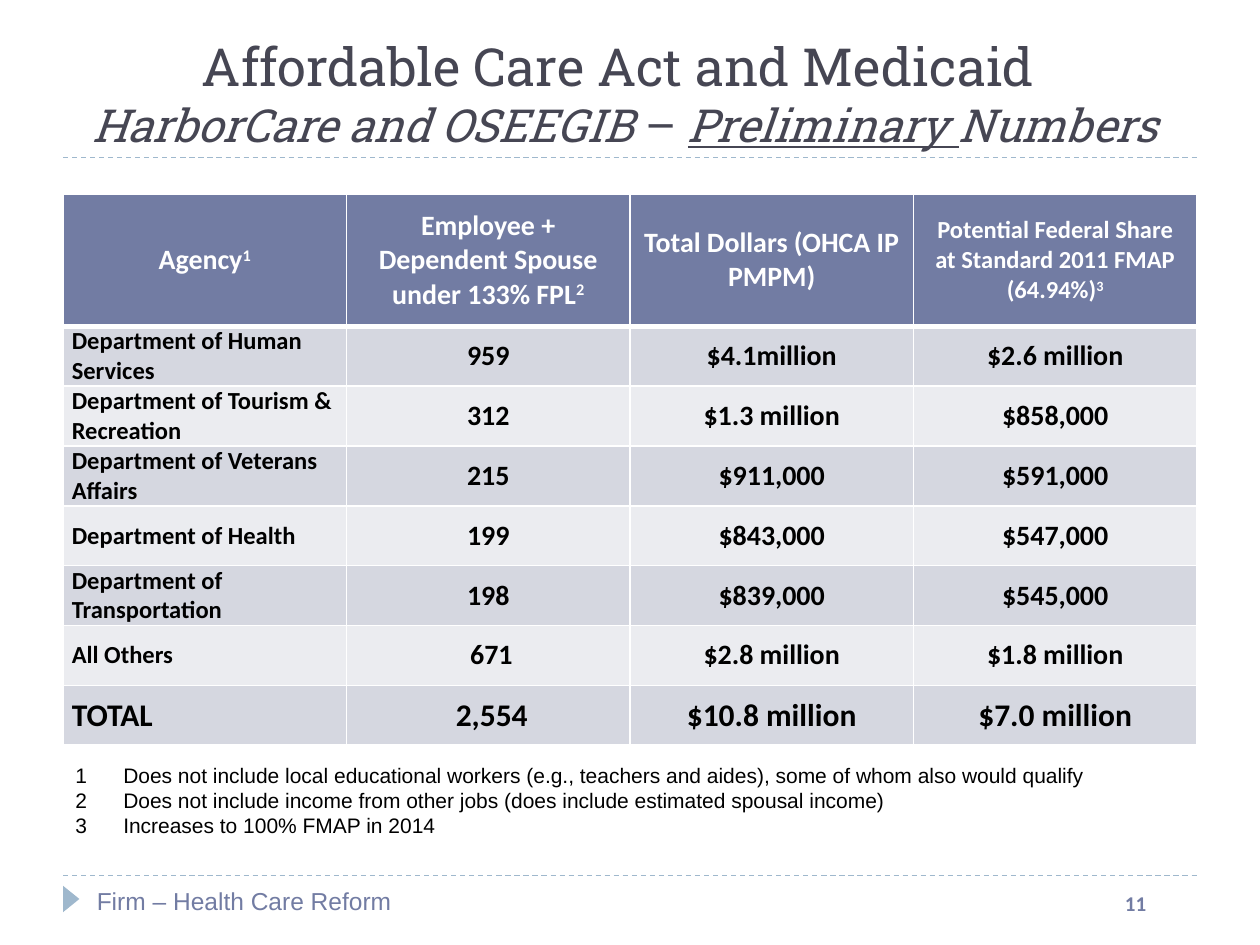
from lxml.etree import SubElement
from pptx import Presentation
from pptx.dml.color import RGBColor
from pptx.enum.dml import MSO_LINE
from pptx.enum.shapes import MSO_CONNECTOR, MSO_SHAPE
from pptx.enum.text import MSO_ANCHOR as Anchor, PP_ALIGN as Align
from pptx.oxml.ns import qn
from pptx.util import Inches, Pt

WHITE = RGBColor(0xFF, 0xFF, 0xFF)
BLACK = RGBColor(0, 0, 0)
SLATE = RGBColor(0x72, 0x7C, 0xA3)
SKY = RGBColor(0x9F, 0xB8, 0xCD)
CHARCOAL = RGBColor(0x46, 0x46, 0x53)
BAND_DARK = RGBColor(0xD5, 0xD7, 0xE0)
BAND_LIGHT = RGBColor(0xEB, 0xEC, 0xF0)

HEADERS = [
    ("Agency", "1", 16),
    ("Employee + Dependent Spouse under 133% FPL", "2", 16),
    ("Total Dollars (OHCA IP PMPM)", "", 16),
    ("Potential Federal Share at Standard 2011 FMAP (64.94%)", "3", 14),
]
AGENCIES = [
    ("Department of Human Services", "959", "$4.1million", "$2.6 million"),
    ("Department of Tourism & Recreation", "312", "$1.3 million", "$858,000"),
    ("Department of Veterans Affairs", "215", "$911,000", "$591,000"),
    ("Department of Health", "199", "$843,000", "$547,000"),
    ("Department of Transportation", "198", "$839,000", "$545,000"),
    ("All Others", " 671", "$2.8 million", "$1.8 million"),
    ("TOTAL", " 2,554", "$10.8 million", "$7.0 million"),
]
FOOTNOTES = [
    "1\tDoes not include local educational workers (e.g., teachers and aides), "
    "some of whom also would qualify",
    "Does not include income from other jobs (does include estimated spousal income)",
    "Increases to 100% FMAP in 2014",
]


def style_font(font, size, name, color, bold=False):
    font.size = Pt(size)
    font.name = name
    font.color.rgb = color
    font.bold = bold


def add_text(slide, left, top, width, height, lines, size, name, color, bold=False):
    box = slide.shapes.add_textbox(Inches(left), Inches(top), Inches(width), Inches(height))
    frame = box.text_frame
    frame.word_wrap = True
    frame.text = "\n".join(lines)
    for paragraph in frame.paragraphs:
        for run in paragraph.runs:
            style_font(run.font, size, name, color, bold)
    return frame


def add_rule(slide, top):
    rule = slide.shapes.add_connector(
        MSO_CONNECTOR.STRAIGHT, Inches(0.5), Inches(top), Inches(9.5), Inches(top))
    rule.line.color.rgb = SKY
    rule.line.width = Pt(0.75)
    rule.line.dash_style = MSO_LINE.DASH
    SubElement(rule._element.spPr, qn("a:effectLst"))


def add_marker(slide):
    marker = slide.shapes.add_shape(
        MSO_SHAPE.ISOSCELES_TRIANGLE, Inches(0.46), Inches(7.07), Inches(0.21), Inches(0.13))
    marker.rotation = 90
    marker.shadow.inherit = False
    marker.fill.solid()
    marker.fill.fore_color.rgb = SKY
    marker.line.fill.background()


def add_title(slide):
    frame = add_text(slide, 0.25, 0.17, 9.42, 1.08,
                     ["Affordable Care Act and Medicaid "], 30, "Roboto Slab", CHARCOAL)
    frame.vertical_anchor = Anchor.BOTTOM
    heading = frame.paragraphs[0]
    heading.alignment = Align.CENTER
    heading.add_line_break()
    subtitle = [("HarborCare and OSEEGIB", True, False), (" – ", False, False),
                ("Preliminary ", True, True), ("Numbers", True, False)]
    for text, italic, underline in subtitle:
        run = heading.add_run()
        run.text = text
        style_font(run.font, 26, "Roboto Slab", CHARCOAL)
        run.font.italic = italic
        run.font.underline = underline


def set_borders(cell, widths):
    properties = cell._tc.get_or_add_tcPr()
    for side, width in zip("LRTB", widths):
        border = SubElement(properties, qn(f"a:ln{side}"), w=str(Pt(width)))
        fill = SubElement(border, qn("a:solidFill"))
        SubElement(fill, qn("a:srgbClr"), val=str(WHITE))


def fill_cell(cell, text, size, color, fill, borders, alignment):
    set_borders(cell, borders)
    cell.fill.solid()
    cell.fill.fore_color.rgb = fill
    cell.vertical_anchor = Anchor.MIDDLE
    paragraph = cell.text_frame.paragraphs[0]
    paragraph.text = text
    paragraph.alignment = alignment
    style_font(paragraph.runs[0].font, size, "Calibri", color, True)
    return paragraph


def add_header(cell, text, mark, size):
    paragraph = fill_cell(cell, text, size, WHITE, SLATE, (1, 1, 1, 3), Align.CENTER)
    if mark:
        run = paragraph.add_run()
        run.text = mark
        style_font(run.font, size, "Calibri", WHITE, True)
        run._r.get_or_add_rPr().set("baseline", "30000")


def add_agency_table(slide):
    table = slide.shapes.add_table(
        len(AGENCIES) + 1, len(HEADERS),
        Inches(0.5), Inches(1.54), Inches(9), Inches(4.38)).table
    for row in table.rows:
        row.height = Inches(0.475)
    table.rows[0].height = Inches(1.05)
    for column, header in enumerate(HEADERS):
        add_header(table.cell(0, column), *header)
    for row, values in enumerate(AGENCIES, 1):
        band = BAND_DARK if row % 2 else BAND_LIGHT
        borders = (1, 1, 3 if row == 1 else 1, 1)
        is_total = row == len(AGENCIES)
        for column, value in enumerate(values):
            cell = table.cell(row, column)
            cell.margin_left = cell.margin_right = Inches(0.07)
            cell.margin_top = cell.margin_bottom = 0
            size = 18 if is_total else 16 if column else 14
            alignment = Align.CENTER if column else Align.LEFT
            paragraph = fill_cell(cell, value, size, BLACK, band, borders, alignment)
            if value.startswith(" "):
                paragraph.space_before = Pt(6)


def add_footnotes(slide):
    frame = add_text(slide, 0.5, 6, 8.85, 0.7, FOOTNOTES, 12, "Arial", BLACK)
    for number, paragraph in enumerate(frame.paragraphs, 1):
        properties = paragraph._p.get_or_add_pPr()
        properties.set("marL", str(Inches(0.38)))
        properties.set("indent", str(Inches(-0.38)))
        if number > 1:
            SubElement(properties, qn("a:buAutoNum"), type="arabicPlain", startAt="2")


def main():
    deck = Presentation()
    deck.slide_width = Inches(10)
    deck.slide_height = Inches(7.5)
    slide = deck.slides.add_slide(deck.slide_layouts[6])
    for top in (6.95, 1.25):
        add_rule(slide, top)
    add_marker(slide)
    add_text(slide, 8.83, 7.02, 0.58, 0.4, ["11"], 12, "Calibri", SLATE, True)
    add_agency_table(slide)
    add_text(slide, 0.67, 6.98, 3.17, 0.52, ["Firm – Health Care Reform"], 14, "Arial", SLATE)
    add_title(slide)
    add_footnotes(slide)
    deck.save("out.pptx")


if __name__ == "__main__":
    main()
